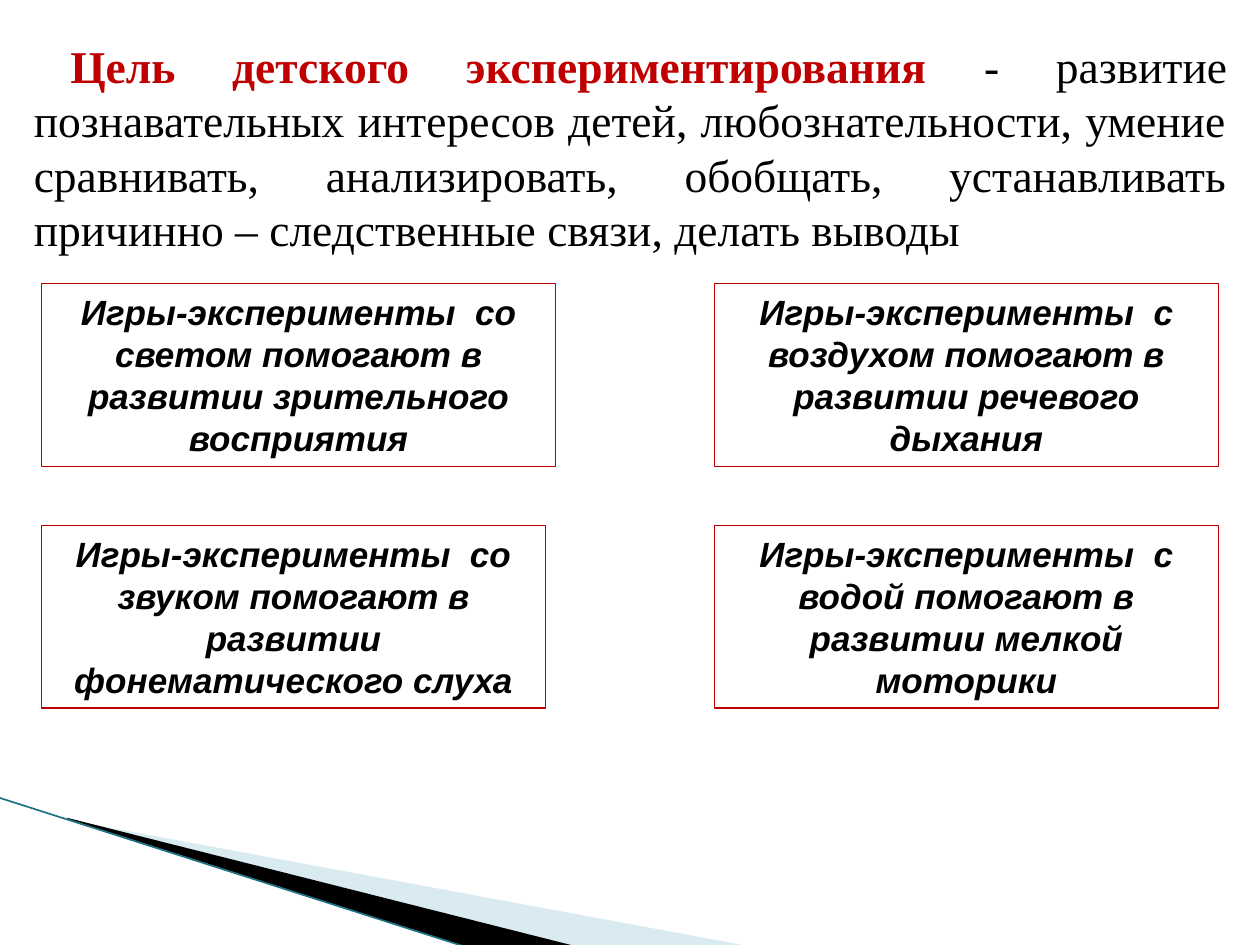
from lxml import etree
from pptx import Presentation
from pptx.dml.color import RGBColor
from pptx.enum.shapes import MSO_CONNECTOR, MSO_SHAPE
from pptx.enum.text import MSO_ANCHOR, MSO_AUTO_SIZE, PP_ALIGN
from pptx.oxml.ns import qn
from pptx.util import Inches, Pt

LINE, RECT = MSO_CONNECTOR.STRAIGHT, MSO_SHAPE.RECTANGLE
GROW, MIDDLE, TOP = MSO_AUTO_SIZE.SHAPE_TO_FIT_TEXT, MSO_ANCHOR.MIDDLE, MSO_ANCHOR.TOP
CENTER, JUSTIFY = PP_ALIGN.CENTER, PP_ALIGN.JUSTIFY

HEX = {"red": "C00000", "ink": "000000", "pale": "A0CBDC", "teal": "1F7285"}
GOAL = {"name": "Times New Roman", "size": Pt(26)}
GAME = {"name": "Arial", "size": Pt(20), "bold": True, "italic": True}

COLS, ROWS = (0.33, 5.67), (2.25, 4.17)
WIDE, HIGH = 4, 1.45
# column, row, extra width, text
GAMES = [
    (1, 0, 0, "Игры-эксперименты  с воздухом помогают в развитии речевого дыхания"),
    (0, 0, 0.08, "Игры-эксперименты  со светом помогают в развитии зрительного восприятия"),
    (1, 1, 0, "Игры-эксперименты  с водой помогают в развитии мелкой моторики"),
    (0, 1, 0, "Игры-эксперименты  со звуком помогают в развитии фонематического слуха"),
]
WEDGES = [
    ("pale", 40, [(0.55, 6.51), (5.95, 7.51), (4.56, 7.51), (0.55, 6.5)]),
    ("ink", 100, [(0.53, 6.49), (4.57, 7.51), (3.72, 7.52), (0.54, 6.5)]),
]


def tint(name):
    return RGBColor.from_string(HEX[name])


def add_run(para, text, style, color):
    run = para.add_run()
    run.text = text
    for key, value in style.items():
        setattr(run.font, key, value)
    run.font.color.rgb = tint(color)
    return run


def set_frame(frame, anchor, align):
    """Apply the shared wrapping and return the first paragraph."""
    for key, value in {"word_wrap": True, "auto_size": GROW,
                       "vertical_anchor": anchor}.items():
        setattr(frame, key, value)
    para = frame.paragraphs[0]
    para.alignment = align
    return para


def add_wedge(slide, color, alpha, points):
    spots = [(Inches(x), Inches(y)) for x, y in points]
    build = slide.shapes.build_freeform(*spots[0])
    build.add_line_segments(spots[1:], close=True)
    wedge = build.convert_to_shape()
    wedge.shadow.inherit = False
    wedge.fill.solid()
    wedge.fill.fore_color.rgb = tint(color)
    wedge.line.fill.background()
    if alpha < 100:
        clr = wedge.fill._xPr.find(".//" + qn("a:srgbClr"))
        etree.SubElement(clr, qn("a:alpha")).set("val", str(alpha * 1000))


def add_edge(slide):
    ends = [Inches(n) for n in (-0.01, 6.33, 3.71, 7.52)]
    edge = slide.shapes.add_connector(LINE, *ends)
    edge.line.color.rgb = tint("teal")
    edge.line.width = Pt(0.95)
    etree.SubElement(edge._element.spPr, qn("a:effectLst"))


def add_goal(slide):
    box = slide.shapes.add_textbox(*map(Inches, (0.17, 0.25, 9.67, 1.85)))
    para = set_frame(box.text_frame, TOP, JUSTIFY)
    para._p.get_or_add_pPr().set("indent", str(Inches(0.29)))
    add_run(para, "Цель детского экспериментирования ", {**GOAL, "bold": True}, "red")
    add_run(para, "- развитие познавательных интересов детей, любознательности, "
            "умение сравнивать, анализировать, обобщать, устанавливать "
            "причинно – следственные связи, делать выводы", GOAL, "ink")


def add_game(slide, col, row, extra, text):
    place = map(Inches, (COLS[col], ROWS[row], WIDE + extra, HIGH))
    box = slide.shapes.add_shape(RECT, *place)
    box.shadow.inherit = False
    box.fill.background()
    box.line.color.rgb = tint("red")
    box.line.width = Pt(0.75)
    add_run(set_frame(box.text_frame, MIDDLE, CENTER), text, GAME, "ink")


def main():
    deck = Presentation()
    deck.slide_width, deck.slide_height = Inches(10), Inches(7.5)
    slide = deck.slides.add_slide(deck.slide_layouts[6])
    for wedge in WEDGES:
        add_wedge(slide, *wedge)
    add_edge(slide)
    add_goal(slide)
    for game in GAMES:
        add_game(slide, *game)
    deck.save("out.pptx")


if __name__ == "__main__":
    main()
